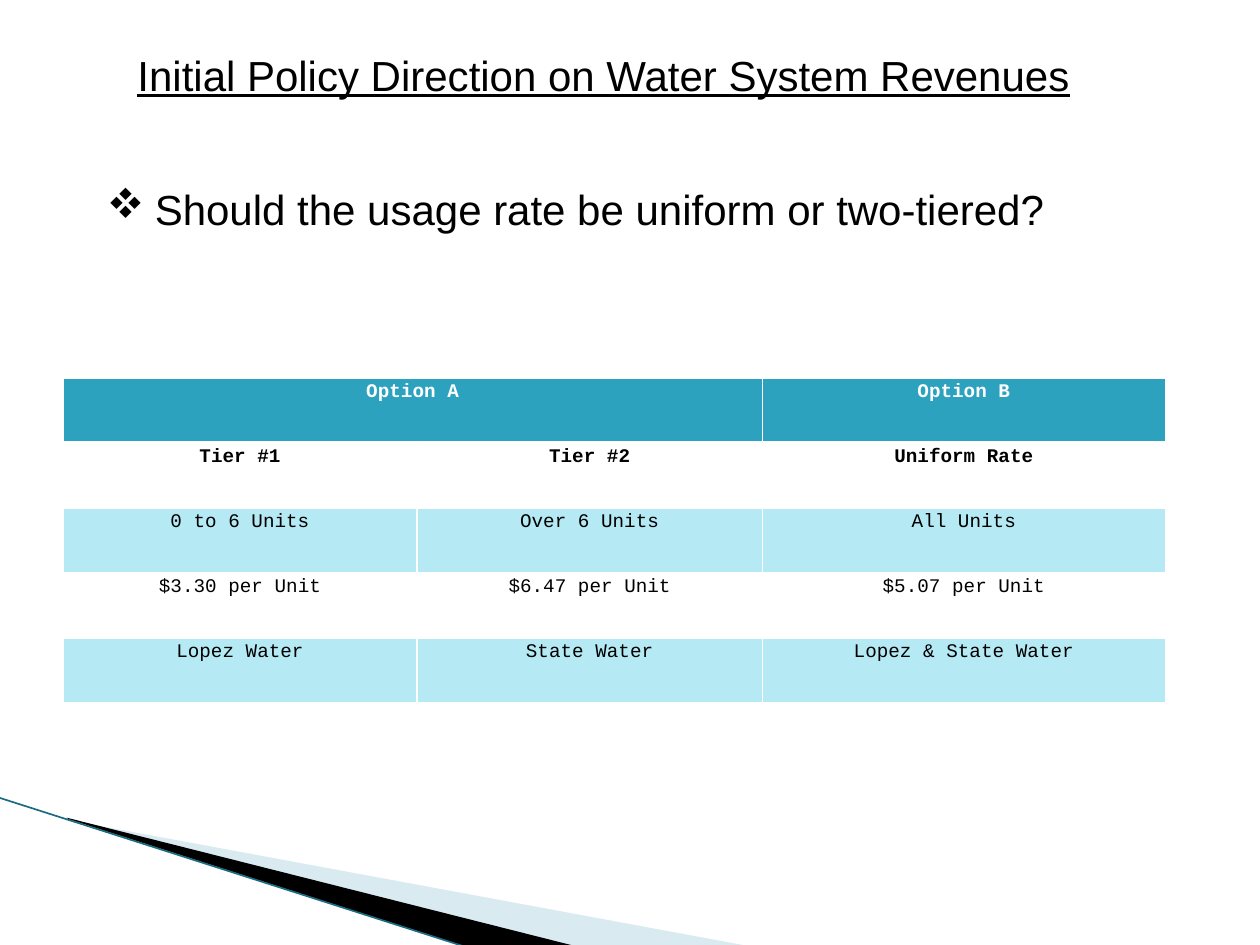
from collections import namedtuple

from lxml.etree import SubElement
from pptx import Presentation
from pptx.dml.color import RGBColor
from pptx.enum.shapes import MSO_CONNECTOR
from pptx.enum.text import MSO_ANCHOR, PP_ALIGN
from pptx.oxml.ns import qn
from pptx.util import Inches, Pt

Box = namedtuple("Box", "left top width height")

SLIDE_WIDTH, SLIDE_HEIGHT = 10, 7.5
BLACK, WHITE = "000000", "FFFFFF"
HEADER_FILL, BAND_FILL = "2DA2BF", "B5E9F4"
WEDGE_FILL, EDGE_LINE = "A0CBDC", "1A6C80"

RATE_ROWS = [
    ["Option A", "", "Option B"],
    ["Tier #1", "Tier #2", "Uniform Rate"],
    ["0 to 6 Units", "Over 6 Units", "All Units"],
    ["$3.30 per Unit", "$6.47 per Unit", "$5.07 per Unit"],
    ["Lopez Water", "State Water", "Lopez & State Water"],
]
COLUMN_SHARES = [2.81, 2.74, 3.2]


def color(value):
    """Turn a hex string into a colour."""
    return RGBColor.from_string(value)


def add_run(paragraph, text, font_name, size, value, bold=False, underline=False):
    """Add one formatted run to a paragraph."""
    run = paragraph.add_run()
    run.text = text
    font = run.font
    font.name, font.size = font_name, Pt(size)
    font.bold, font.underline = bold, underline
    font.color.rgb = color(value)


def add_wedge(slide, box, points, value, opacity=100):
    """Draw a filled polygon from points measured from the box corner."""
    corners = [(Inches(box.left + x), Inches(box.top + y)) for x, y in points]
    builder = slide.shapes.build_freeform(*corners[0])
    builder.add_line_segments(corners[1:], close=True)
    shape = builder.convert_to_shape()
    shape.shadow.inherit = False
    shape.fill.solid()
    shape.fill.fore_color.rgb = color(value)
    shape.line.fill.background()
    if opacity < 100:
        fill_color = shape.fill._xPr.find(qn("a:solidFill"))[0]
        SubElement(fill_color, qn("a:alpha"), val=str(opacity * 1000))


def add_corner(slide, box):
    """Draw the wedges and the edge line in the lower left corner."""
    add_wedge(slide, box, [(0.55, 0.18), (5.95, 1.18), (4.56, 1.18), (0.55, 0.17)],
              WEDGE_FILL, 40)
    add_wedge(slide, box, [(0.53, 0.16), (4.57, 1.18), (3.72, 1.19), (0.54, 0.17)],
              BLACK)
    edge = slide.shapes.add_connector(
        MSO_CONNECTOR.STRAIGHT, Inches(box.left - 0.01), Inches(box.top),
        Inches(box.left + 3.71), Inches(box.top + 1.19))
    edge.line.color.rgb = color(EDGE_LINE)
    edge.line.width = Pt(0.95)
    SubElement(edge._element.spPr, qn("a:effectLst"))


def add_question(slide, box):
    """Place the underlined heading and the bulleted question."""
    shape = slide.shapes.add_textbox(*map(Inches, box))
    frame = shape.text_frame
    frame.word_wrap = True
    heading = frame.paragraphs[0]
    heading.alignment = PP_ALIGN.CENTER
    add_run(heading, "Initial Policy Direction on Water System Revenues",
            "Arial", 24, BLACK, underline=True)
    question = frame.add_paragraph()
    question.level = 1
    question.space_before = Pt(48)
    properties = question._p.get_or_add_pPr()
    properties.set("marL", str(Inches(0.88)))
    properties.set("indent", str(Inches(-0.38)))
    SubElement(properties, qn("a:buFont"), typeface="Wingdings", charset="2")
    SubElement(properties, qn("a:buChar"), char="v")
    add_run(question, "Should the usage rate be uniform or two-tiered?",
            "Arial", 24, BLACK)


def add_borders(cell, bottom_width):
    """Give a cell white borders with the given bottom width."""
    properties = cell._tc.get_or_add_tcPr()
    for side, width in zip("LRTB", (1, 1, 1, bottom_width)):
        border = SubElement(properties, qn(f"a:ln{side}"), w=str(Pt(width)))
        fill = SubElement(border, qn("a:solidFill"))
        SubElement(fill, qn("a:srgbClr"), val=WHITE)


def format_cell(cell, text, row):
    """Fill one table cell and style it by its row."""
    cell.margin_left = cell.margin_right = Inches(0.07)
    cell.margin_top = cell.margin_bottom = 0
    cell.vertical_anchor = MSO_ANCHOR.TOP
    add_borders(cell, 3 if row == 0 else 1)
    if row % 2:
        cell.fill.background()
    else:
        cell.fill.solid()
        cell.fill.fore_color.rgb = color(BAND_FILL if row else HEADER_FILL)
    if text:
        paragraph = cell.text_frame.paragraphs[0]
        paragraph.alignment = PP_ALIGN.CENTER
        paragraph.line_spacing = 1.15
        add_run(paragraph, text, "Courier New", 11, BLACK if row else WHITE, bold=row < 2)


def add_rates(slide, box):
    """Place the table that compares the two rate options."""
    table = slide.shapes.add_table(
        len(RATE_ROWS), len(COLUMN_SHARES), *map(Inches, box)).table
    for column, share in zip(table.columns, COLUMN_SHARES):
        column.width = Inches(box.width * share / sum(COLUMN_SHARES))
    for row, texts in enumerate(RATE_ROWS):
        for column, text in enumerate(texts):
            format_cell(table.cell(row, column), text, row)
    table.cell(0, 0).merge(table.cell(0, 1))


def main():
    """Build the slide and save it."""
    presentation = Presentation()
    presentation.slide_width = Inches(SLIDE_WIDTH)
    presentation.slide_height = Inches(SLIDE_HEIGHT)
    slide = presentation.slides.add_slide(presentation.slide_layouts[6])
    add_corner(slide, Box(0, 6.33, 5.95, 1.17))
    add_question(slide, Box(0.25, 0.34, 9.08, 3.06))
    add_rates(slide, Box(0.5, 3, 8.75, 2.58))
    presentation.save("out.pptx")


if __name__ == "__main__":
    main()
